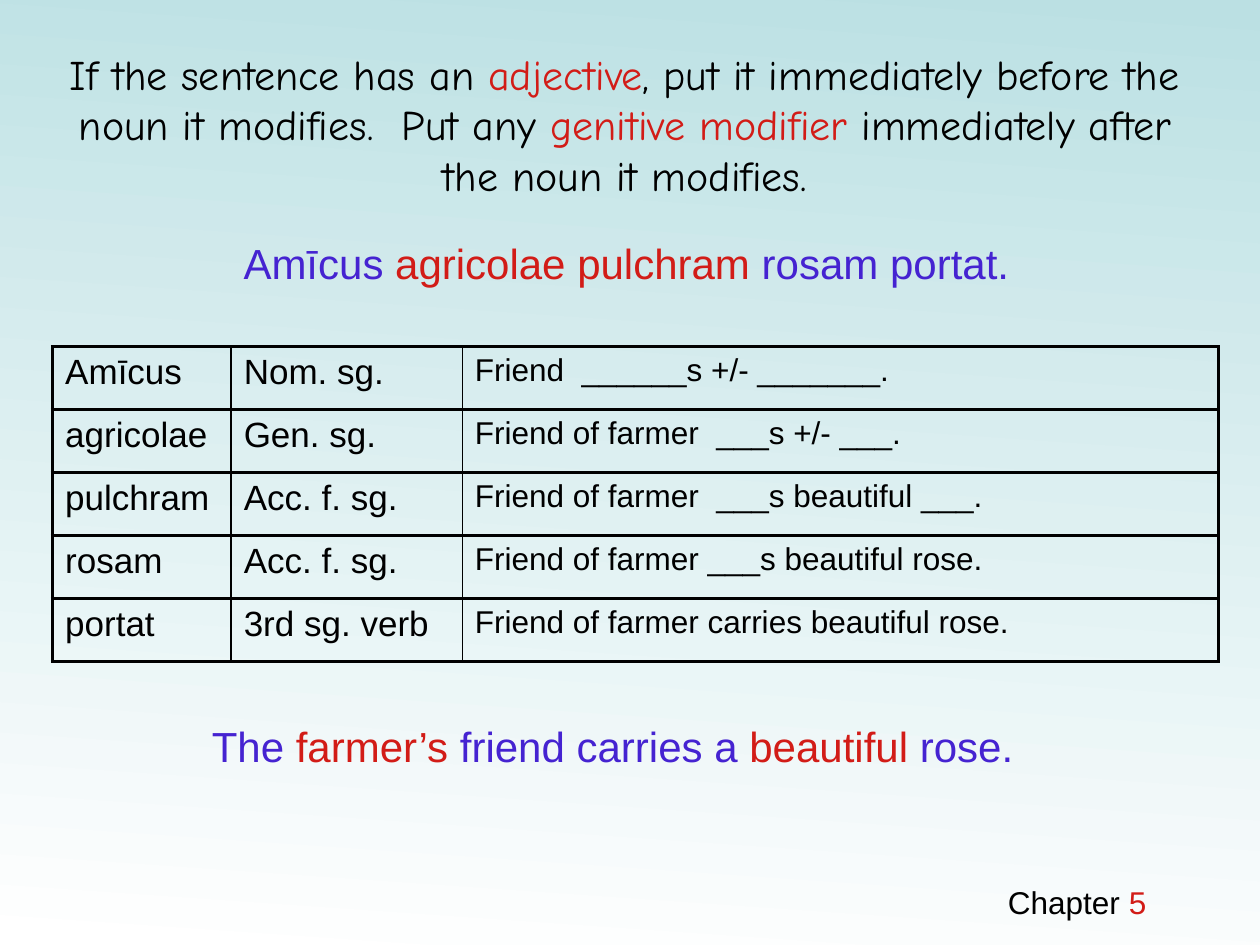
from dataclasses import dataclass

import pptx
import pptx.dml.color
import pptx.enum.text
import pptx.oxml
import pptx.oxml.ns
import pptx.util
from pptx.util import Cm, Pt

BLACK, RED, BLUE = "000000", "D21C17", "4523D1"
THIN, THICK = 1, 2.25
TABLE_LEFT, TABLE_TOP, ROW_HEIGHT = 1.06, 6.99, 1.27
COLUMN_WIDTHS = (3.6, 4.66, 15.24)
COLUMN_SIZES = (20, 20, 18)


@dataclass
class Piece:
    text: str
    color: str = BLACK


@dataclass
class TextLine:
    left: float
    top: float
    width: float
    height: float
    size: int
    pieces: list[Piece]
    wrap: bool = True


@dataclass
class ParsingStep:
    word: str
    form: str
    translation: str


RULE = [
    Piece("If the sentence has an "),
    Piece("adjective", RED),
    Piece(", put it immediately before the noun it modifies.  Put any "),
    Piece("genitive modifier ", RED),
    Piece("immediately after the noun it modifies."),
]

LATIN = TextLine(4.66, 4.66, 16.03, 1.27, 24, [
    Piece("Amīcus ", BLUE),
    Piece("agricolae pulchram", RED),
    Piece(" rosam portat.", BLUE),
])

ENGLISH = TextLine(4.02, 14.39, 17.36, 1.27, 24, [
    Piece("The ", BLUE),
    Piece("farmer’s", RED),
    Piece(" friend carries a ", BLUE),
    Piece("beautiful", RED),
    Piece(" rose.", BLUE),
])

CHAPTER = TextLine(20.07, 17.67, 3.3, 1.02, 18,
                   [Piece("Chapter "), Piece("5", RED)], wrap=False)

STEPS = [
    ParsingStep("Amīcus", "Nom. sg.", "Friend  ______s +/- _______."),
    ParsingStep("agricolae", "Gen. sg.", "Friend of farmer  ___s +/- ___."),
    ParsingStep("pulchram", "Acc. f. sg.", "Friend of farmer  ___s beautiful ___."),
    ParsingStep("rosam", "Acc. f. sg.", "Friend of farmer ___s beautiful rose."),
    ParsingStep("portat", "3rd sg. verb", "Friend of farmer carries beautiful rose."),
]


def rgb(color: str) -> pptx.dml.color.RGBColor:
    return pptx.dml.color.RGBColor.from_string(color)


def add_runs(paragraph, pieces: list[Piece], size: int, font: str = "Arial") -> None:
    for piece in pieces:
        run = paragraph.add_run()
        run.text = piece.text
        run.font.name = font
        run.font.size = Pt(size)
        run.font.color.rgb = rgb(piece.color)


def set_background(slide) -> None:
    fill = slide.background.fill
    fill.gradient()
    fill.gradient_angle = 86
    for stop, position, color in zip(fill.gradient_stops, (0, 1), ("FFFFFF", "BBE0E3")):
        stop.position = position
        stop.color.rgb = rgb(color)


def fill_title(slide) -> None:
    title = slide.shapes.title
    title.left, title.top, title.width, title.height = Cm(1.06), Cm(0.85), Cm(23.07), Cm(3.81)
    frame = title.text_frame
    frame.auto_size = pptx.enum.text.MSO_AUTO_SIZE.SHAPE_TO_FIT_TEXT
    frame.vertical_anchor = pptx.enum.text.MSO_ANCHOR.TOP
    paragraph = frame.paragraphs[0]
    paragraph.alignment = pptx.enum.text.PP_ALIGN.CENTER
    add_runs(paragraph, RULE, 24, "Comic Neue")


def add_text_line(slide, line: TextLine) -> None:
    box = slide.shapes.add_textbox(Cm(line.left), Cm(line.top), Cm(line.width), Cm(line.height))
    frame = box.text_frame
    frame.word_wrap = line.wrap
    frame.auto_size = pptx.enum.text.MSO_AUTO_SIZE.SHAPE_TO_FIT_TEXT
    add_runs(frame.paragraphs[0], line.pieces, line.size)


def set_borders(cell, left: float, right: float) -> None:
    properties = cell._tc.get_or_add_tcPr()
    sides = {"lnL": left, "lnR": right, "lnT": THICK, "lnB": THICK}
    for index, (side, width) in enumerate(sides.items()):
        border = pptx.oxml.parse_xml(
            f'<a:{side} {pptx.oxml.ns.nsdecls("a")} w="{Pt(width)}">'
            f'<a:solidFill><a:srgbClr val="{BLACK}"/></a:solidFill></a:{side}>')
        properties.insert(index, border)


def add_step_table(slide, step: ParsingStep, top: float) -> None:
    table = slide.shapes.add_table(
        1, len(COLUMN_WIDTHS), Cm(TABLE_LEFT), Cm(top),
        Cm(sum(COLUMN_WIDTHS)), Cm(ROW_HEIGHT)).table
    table.first_row = False
    table.horz_banding = False
    texts = (step.word, step.form, step.translation)
    last = len(texts) - 1
    for index, (text, width, size) in enumerate(zip(texts, COLUMN_WIDTHS, COLUMN_SIZES)):
        table.columns[index].width = Cm(width)
        cell = table.cell(0, index)
        cell.fill.background()
        set_borders(cell, THICK if index == 0 else THIN, THICK if index == last else THIN)
        paragraph = cell.text_frame.paragraphs[0]
        paragraph.space_before = Pt(size * 0.2)
        add_runs(paragraph, [Piece(text)], size)


def main() -> None:
    presentation = pptx.Presentation()
    presentation.slide_width, presentation.slide_height = Cm(25.4), Cm(19.05)
    slide = presentation.slides.add_slide(presentation.slide_layouts.get_by_name("Title Only"))
    set_background(slide)

    # Rule and example sentence
    fill_title(slide)
    add_text_line(slide, LATIN)

    # One single-row table per parsing step, stacked without gaps
    for number, step in enumerate(STEPS):
        add_step_table(slide, step, TABLE_TOP + number * ROW_HEIGHT)

    # Translation and chapter mark
    add_text_line(slide, ENGLISH)
    add_text_line(slide, CHAPTER)
    presentation.save("out.pptx")


if __name__ == "__main__":
    main()
